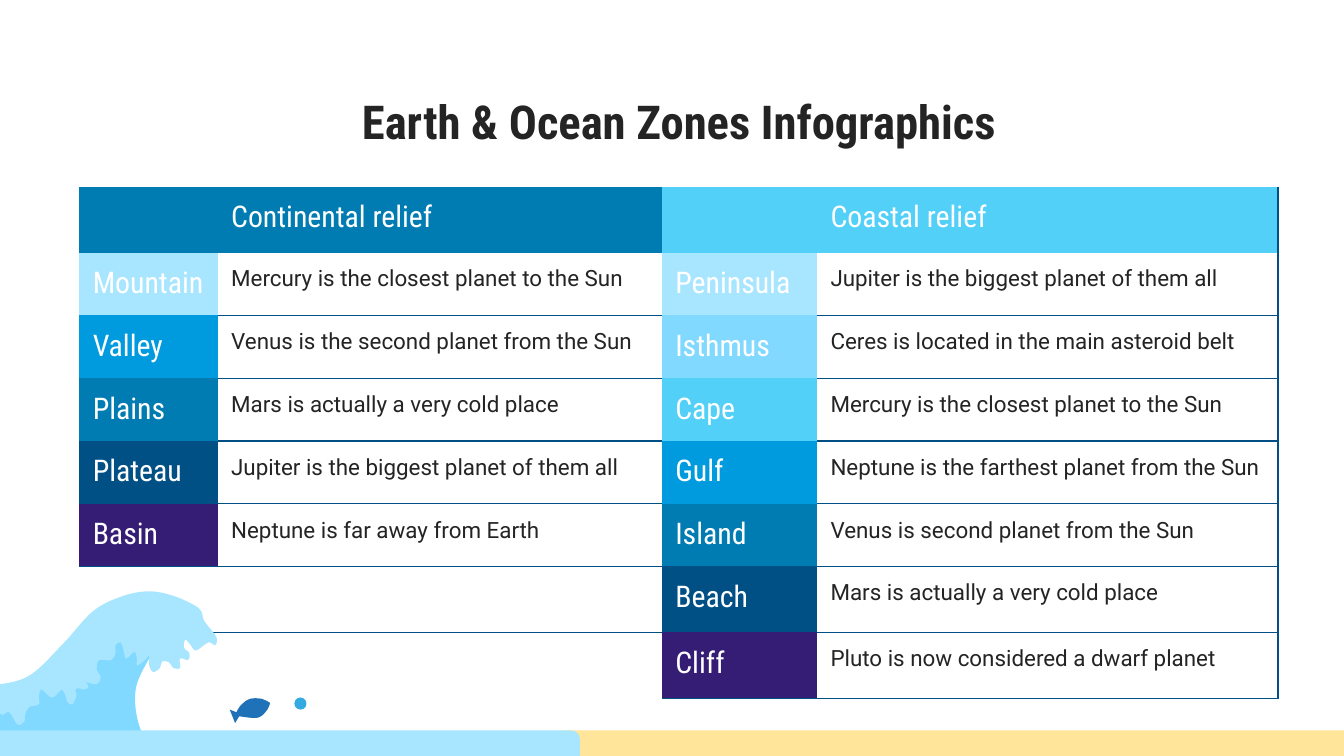
from lxml.etree import SubElement
from pptx import Presentation
from pptx.dml.color import RGBColor as RGB
from pptx.enum.shapes import MSO_SHAPE as SHAPE
from pptx.enum.text import MSO_ANCHOR as ANCHOR, PP_ALIGN as ALIGN
from pptx.oxml.ns import qn
from pptx.util import Inches, Pt

C = {
    "ink": "242424", "white": "FFFFFF", "foam": "A8E6FF", "sky": "82D9FF",
    "aqua": "52D0F8", "azure": "009ADE", "sea": "007CB2", "navy": "005085",
    "violet": "351C75", "sand": "FFE599", "fish": "1F71B8", "bubble": "35AAE1",
}
HEAD, BODY = "Roboto Condensed", "Roboto"
NO_STYLE = "{2D5ABB26-0587-4C30-8999-92F81FD0307C}"

prs = Presentation()
prs.slide_width, prs.slide_height = Inches(10), Inches(5.625)
U = prs.slide_width / 100  # one column of a 100-column square grid
s = prs.slides.add_slide(prs.slide_layouts[6])


def write(tf, text, font=HEAD, size=16, color="white", bold=False, align=ALIGN.LEFT):
    tf.word_wrap = True
    p = tf.paragraphs[0]
    p.alignment = align
    r = p.add_run()
    r.text = text
    r.font.name, r.font.size, r.font.bold = font, Pt(size), bold
    r.font.color.rgb = RGB.from_string(C[color])


def add_curve(points, color):
    """Draw a closed smooth curve; a point given twice is a sharp corner."""
    n = len(points)
    around = [[points[(i + k) % n] for k in (-1, 0, 1, 2)] for i in range(n)]
    segments = [seg for seg in around if seg[1] != seg[2]]
    start, *ends = [[round(v * U) for v in p]
                    for p in [segments[0][1]] + [seg[2] for seg in segments]]
    fb = s.shapes.build_freeform(*start)
    fb.add_line_segments(ends, close=True)
    sp = fb.convert_to_shape()
    for line, (a, b, c, d) in zip(list(sp._element.iter(qn("a:lnTo"))), segments):
        line.tag = qn("a:cubicBezTo")
        end = line[0]
        controls = ([q + (r - p) / 6 for p, q, r in zip(a, b, c)],
                    [r - (v - q) / 6 for q, r, v in zip(b, c, d)])
        for x, y in controls:
            pt = SubElement(line, qn("a:pt"), x=str(round(x * U) - sp.left),
                            y=str(round(y * U) - sp.top))
            end.addprevious(pt)
    sp.shadow.inherit = False
    sp.fill.solid()
    sp.fill.fore_color.rgb = RGB.from_string(C[color])
    sp.line.fill.background()


# Title
tf = s.shapes.add_textbox(*(round(v * U) for v in (5.9, 5.9, 89.2, 6.2))).text_frame
tf.margin_left = tf.margin_right = tf.margin_top = tf.margin_bottom = round(U)
tf.vertical_anchor = ANCHOR.TOP
write(tf, "Earth & Ocean Zones Infographics", size=25, color="ink", bold=True,
      align=ALIGN.CENTER)

# Table: each half has a heading, then (name, colour, description) rows
halves = [
    ("Continental relief", "sea", [
        ("Mountain", "foam", "Mercury is the closest planet to the Sun"),
        ("Valley", "azure", "Venus is the second planet from the Sun"),
        ("Plains", "sea", "Mars is actually a very cold place"),
        ("Plateau", "navy", "Jupiter is the biggest planet of them all"),
        ("Basin", "violet", "Neptune is far away from Earth"),
    ]),
    ("Coastal relief", "aqua", [
        ("Peninsula", "foam", "Jupiter is the biggest planet of them all"),
        ("Isthmus", "sky", "Ceres is located in the main asteroid belt"),
        ("Cape", "aqua", "Mercury is the closest planet to the Sun"),
        ("Gulf", "azure", "Neptune is the farthest planet from the Sun"),
        ("Island", "sea", "Venus is second planet from the Sun"),
        ("Beach", "navy", "Mars is actually a very cold place"),
        ("Cliff", "violet", "Pluto is now considered a dwarf planet"),
    ]),
]
col_widths = [10.3, 33.05, 11.55, 34.3]
row_heights = [3.9] * 7 + [4.6]

texts, fills, ruled = {}, {}, set()
for h, (heading, color, zones) in enumerate(halves):
    name_col, text_col = 2 * h, 2 * h + 1
    texts[0, text_col] = heading
    fills[0, name_col] = fills[0, text_col] = color
    for row, (name, color, text) in enumerate(zones, 1):
        texts[row, name_col], texts[row, text_col] = name, text
        fills[row, name_col] = color
        ruled.add((row, text_col))
    ruled.add((len(zones), name_col))

table = s.shapes.add_table(
    len(row_heights), len(col_widths), round(5.9 * U), round(13.9 * U),
    round(sum(col_widths) * U), round(sum(row_heights) * U)).table
table.first_row = table.horz_banding = False
table._tbl.tblPr.find(qn("a:tableStyleId")).text = NO_STYLE
for col, width in zip(table.columns, col_widths):
    col.width = round(width * U)
for row, height in zip(table.rows, row_heights):
    row.height = round(height * U)

for row in range(len(row_heights)):
    for col in range(len(col_widths)):
        cell = table.cell(row, col)
        cell.margin_left = cell.margin_right = cell.margin_top = round(U)
        cell.margin_bottom = round(U if (row, col) in texts else 0.9 * U)
        if (row, col) in texts:
            plain = row > 0 and col % 2
            style = {"font": BODY, "size": 12, "color": "ink"} if plain else {}
            write(cell.text_frame, texts[row, col], **style)

        tc_pr = cell._tc.get_or_add_tcPr()
        borders = {"lnR": col == 3, "lnT": (row - 1, col) in ruled,
                   "lnB": (row, col) in ruled}
        for tag in (tag for tag, shown in borders.items() if shown):
            ln = SubElement(tc_pr, qn(f"a:{tag}"), w=str(Pt(0.75)))
            SubElement(SubElement(ln, qn("a:solidFill")), qn("a:srgbClr"), val=C["navy"])
        if (row, col) in fills:
            cell.fill.solid()
            cell.fill.fore_color.rgb = RGB.from_string(C[fills[row, col]])
        else:
            cell.fill.background()

# Wave: the body, then its foam crest
add_curve([
    (9, 47.3), (6.8, 47.8), (4.6, 49.2), (1.9, 51), (-0.2, 52.2), (-0.2, 52.2),
    (-0.2, 57.5), (-0.2, 57.5), (15.1, 57.5), (15.1, 57.5), (12.6, 56.5),
    (10.6, 54.6), (10.1, 51.3), (11.5, 48.3), (11.5, 48.3),
], "sky")
add_curve([
    (11, 44), (9, 44.4), (6.9, 45.5), (4.7, 47.9), (2.3, 50.2), (0.1, 50.9),
    (-0.8, 50.7), (-1.2, 52.6), (-1, 53.2), (-0.2, 53), (0.2, 53.2), (0.7, 53),
    (1.3, 53.9), (1.8, 53.7), (1.9, 53.1), (2.2, 52.6), (2.9, 52.4), (2.9, 51.8),
    (3.1, 51.3), (3.8, 51.9), (4.3, 51.6), (4.6, 51.3), (4.9, 51.8), (5, 52.2),
    (5.4, 52.4), (5.7, 51.7), (5.6, 51.4), (5.8, 51.2), (6.3, 51.3), (6.6, 51.1),
    (6.4, 50.8), (6.6, 50.8), (7.2, 50.9), (7.5, 50.4), (7.2, 49.8), (7.3, 49.2),
    (7.6, 49.1), (8.3, 49.1), (8.6, 48.6), (8.6, 48), (9, 47.8), (9.2, 48.4),
    (9.4, 49), (10, 48.5), (10.2, 49), (10.2, 49.5), (10.7, 49.2), (11.1, 48.8),
    (11.1, 49.5), (11.4, 50), (11.9, 49.7), (12.1, 49.2), (12.6, 49.3),
    (12.9, 49.7), (13.4, 49.7), (13.4, 49), (14, 49.1), (14.1, 48.6), (13.7, 48.2),
    (13.8, 47.6), (14.2, 48), (14.6, 48.4), (15.5, 47.8), (16, 48), (16.1, 47.4),
    (15.2, 46.2), (15, 45.5), (14.4, 45), (12.8, 44.3),
], "foam")

# Sand and water along the bottom, and a bubble
for preset, box, color in [
    (SHAPE.ROUNDED_RECTANGLE, (41.1, 54.4, 60.5, 3.2), "sand"),
    (SHAPE.ROUNDED_RECTANGLE, (-0.8, 54.4, 43.9, 3.6), "foam"),
    (SHAPE.OVAL, (21.9, 51.9, 0.9, 0.9), "bubble"),
]:
    sp = s.shapes.add_shape(preset, *(round(v * U) for v in box))
    sp.shadow.inherit = False
    sp.fill.solid()
    sp.fill.fore_color.rgb = RGB.from_string(C[color])
    if preset == SHAPE.OVAL:
        sp.line.fill.background()
    else:
        sp.line.color.rgb = RGB.from_string(C[color])
        sp.line.width = Pt(0.75)

# Fish
add_curve([
    (18.6, 52), (19.5, 52), (20.1, 52.3), (20.1, 52.3), (19.9, 52.8), (19.2, 53.4),
    (17.8, 53.3), (17.8, 53.3), (17.5, 53.8), (17.5, 53.8), (17.1, 52.8),
    (17.1, 52.8), (17.6, 53), (17.6, 53), (17.9, 52.5),
], "fish")

prs.save("out.pptx")
